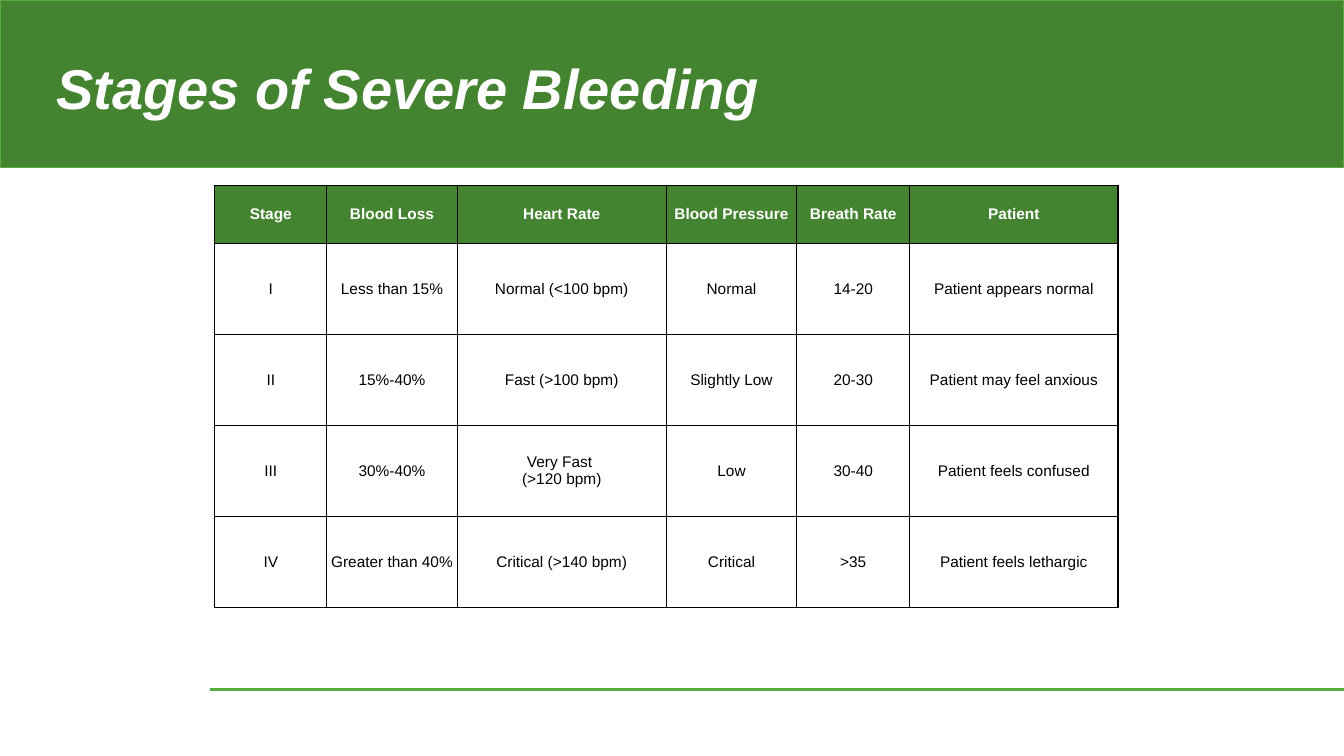
from dataclasses import dataclass

from lxml import etree
from pptx import Presentation
from pptx import util as u
from pptx.dml.color import RGBColor
from pptx.enum import shapes, text
from pptx.oxml import parse_xml
from pptx.oxml.ns import nsdecls, qn


@dataclass(frozen=True)
class Theme:
    font: str = "Arial"
    green: str = "448431"
    accent: str = "57AC40"
    white: str = "FFFFFF"
    black: str = "000000"
    title_size: int = 40
    table_size: int = 11
    thin: float = 1
    thick: float = 2


THEME = Theme()
WIDTH, HEIGHT = 13.33, 7.5
COLUMNS = (1.11, 1.29, 2.07, 1.29, 1.12, 2.06)
ROWS = (0.57,) + (0.9,) * 4
STAGES = (
    ("Stage", "Blood Loss", "Heart Rate", "Blood Pressure", "Breath Rate", "Patient"),
    ("I", "Less than 15%", "Normal (<100 bpm)", "Normal", "14-20",
     "Patient appears normal"),
    ("II", "15%-40%", "Fast (>100 bpm)", "Slightly Low", "20-30",
     "Patient may feel anxious"),
    ("III", "30%-40%", "Very Fast \n(>120 bpm)", "Low", "30-40",
     "Patient feels confused"),
    ("IV", "Greater than 40%", "Critical (>140 bpm)", "Critical", ">35",
     "Patient feels lethargic"),
)


def color(value):
    return RGBColor.from_string(value)


def write(frame, words, *, size, fill, align, bold=False, italic=False, spacing=None):
    """Fill a text frame, one paragraph for each line of words."""
    frame.text = words
    frame.word_wrap = True
    for para in frame.paragraphs:
        para.alignment = align
        para.line_spacing = spacing
        for span in para.runs:
            font = span.font
            font.name, font.size = THEME.font, u.Pt(size)
            font.bold, font.italic = bold, italic
            font.color.rgb = color(fill)


def add_header(page, left, top, width, height):
    band = page.shapes.add_shape(
        shapes.MSO_SHAPE.RECTANGLE, *map(u.Inches, (left, top, width, height)))
    band.shadow.inherit = False
    band.fill.solid()
    band.fill.fore_color.rgb = color(THEME.green)
    band.line.color.rgb = color(THEME.accent)
    band.line.width = u.Pt(THEME.thin)

    title = page.shapes.title
    title.element.getparent().append(title.element)  # in front of the band
    title.left, title.top = u.Inches(left + 0.46), u.Inches(top + 0.35)
    title.width, title.height = u.Inches(8.47), u.Inches(1.11)
    write(title.text_frame, "Stages of Severe Bleeding", size=THEME.title_size,
          fill=THEME.white, align=text.PP_ALIGN.LEFT, bold=True, italic=True,
          spacing=0.9)
    title.text_frame.vertical_anchor = text.MSO_ANCHOR.MIDDLE
    title.text_frame.auto_size = text.MSO_AUTO_SIZE.NONE


def add_borders(cell):
    properties = cell._tc.get_or_add_tcPr()
    for place, side in enumerate("LRTB"):
        properties.insert(place, parse_xml(
            f'<a:ln{side} {nsdecls("a")} w="{u.Pt(THEME.thin)}"><a:solidFill>'
            f'<a:srgbClr val="{THEME.black}"/></a:solidFill></a:ln{side}>'))


def format_cell(cell, words, is_header):
    cell.margin_left = cell.margin_right = u.Inches(0.04)
    cell.margin_top = cell.margin_bottom = 0
    cell.vertical_anchor = text.MSO_ANCHOR.MIDDLE
    if is_header:
        cell.fill.solid()
        cell.fill.fore_color.rgb = color(THEME.green)
    else:
        cell.fill.background()
    add_borders(cell)
    write(cell.text_frame, words, size=THEME.table_size, bold=is_header,
          fill=THEME.white if is_header else THEME.black,
          align=text.PP_ALIGN.CENTER)


def add_stages(page, left, top, width, height):
    """Place the table, sharing the box out in proportion to COLUMNS and ROWS."""
    table = page.shapes.add_table(
        len(ROWS), len(COLUMNS), *map(u.Inches, (left, top, width, height))).table
    for column, share in zip(table.columns, COLUMNS):
        column.width = u.Inches(width * share / sum(COLUMNS))
    for row, share in zip(table.rows, ROWS):
        row.height = u.Inches(height * share / sum(ROWS))
    for r, record in enumerate(STAGES):
        for c, words in enumerate(record):
            format_cell(table.cell(r, c), words, is_header=r == 0)


def add_footer_rule(page, left, top, right):
    rule = page.shapes.add_connector(
        shapes.MSO_CONNECTOR.STRAIGHT, *map(u.Inches, (left, top, right, top)))
    rule.line.color.rgb = color(THEME.accent)
    rule.line.width = u.Pt(THEME.thick)
    etree.SubElement(rule.element.spPr, qn("a:effectLst"))


def main():
    deck = Presentation()
    deck.slide_width, deck.slide_height = u.Inches(WIDTH), u.Inches(HEIGHT)
    page = deck.slides.add_slide(deck.slide_layouts.get_by_name("Title Only"))
    add_header(page, 0, 0, WIDTH, 1.66)
    add_footer_rule(page, 2.08, 6.84, WIDTH)
    add_stages(page, 2.13, 1.84, 8.96, 4.19)
    deck.save("out.pptx")


if __name__ == "__main__":
    main()
